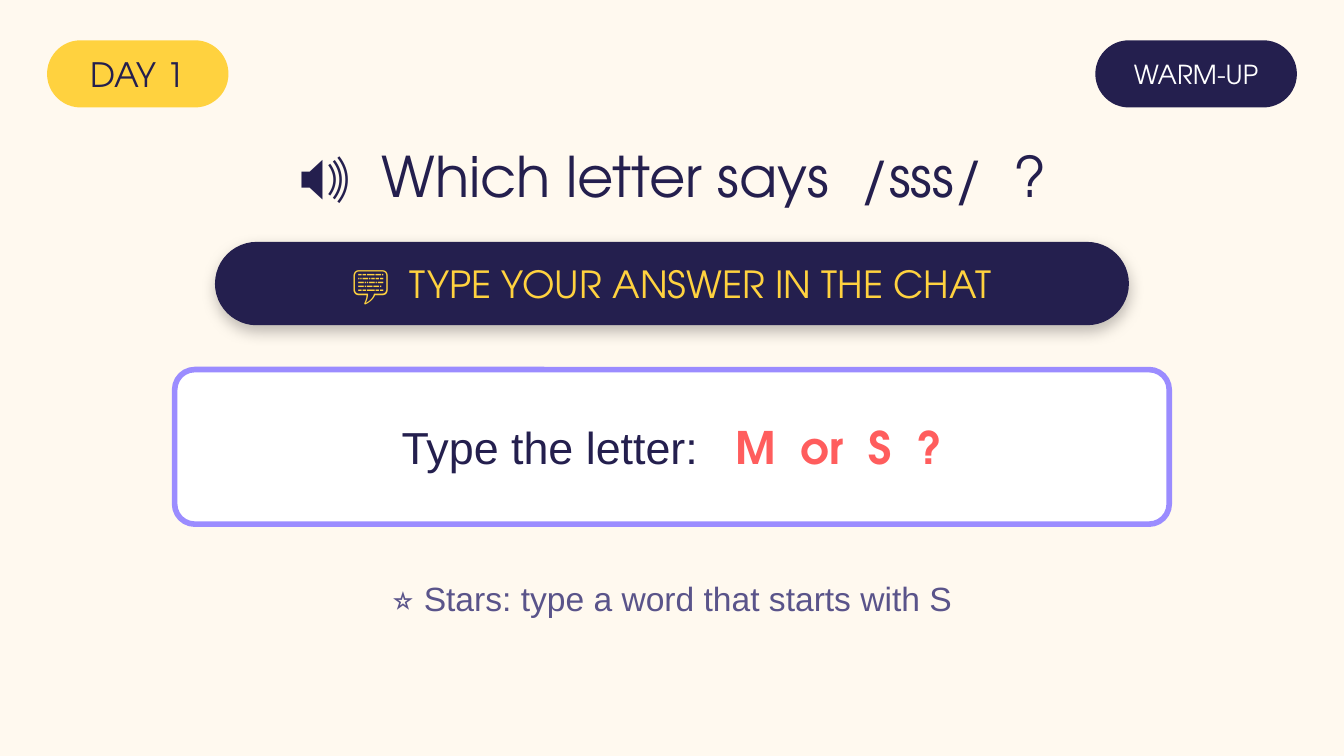
"""Build the Day 1 warm-up slide asking which letter makes a sound."""
from dataclasses import dataclass

from lxml import etree
from pptx import Presentation
from pptx import util as u
from pptx.dml.color import RGBColor
from pptx.enum import shapes, text
from pptx.oxml.ns import qn

DISPLAY, BODY = "TeX Gyre Adventor", "Arial"
NAVY, YELLOW, WHITE, CREAM = "241F4E", "FFD23F", "FFFFFF", "FFF9EF"
LILAC, CORAL, MUTED = "9B8CFF", "FF5D5D", "5A548A"
SLIDE_WIDTH = 10
SLIDE_HEIGHT = SLIDE_WIDTH * 9 / 16


@dataclass(frozen=True)
class Span:
    words: str
    size: int
    colour: str
    font: str = DISPLAY
    bold: bool = False


@dataclass(frozen=True)
class Panel:
    fill: str
    corner: float = 0.5
    border: str | None = None
    raised: bool = False


@dataclass(frozen=True)
class Label:
    left: float
    top: float
    width: float
    height: float
    spans: tuple[Span, ...]
    panel: Panel | None = None
    inset: bool = False

    def bounds(self) -> tuple[u.Length, ...]:
        return tuple(map(u.Inches, (self.left, self.top, self.width, self.height)))


LABELS = (
    Label(0.35, 0.3, 1.35, 0.5, (Span("DAY 1", 18, NAVY),), Panel(YELLOW)),
    Label(8.15, 0.3, 1.5, 0.5, (Span("WARM-UP", 14, WHITE),), Panel(NAVY)),
    Label(0, 0.95, SLIDE_WIDTH, 0.7,
          (Span("🔊  Which letter says  /sss/  ?", 30, NAVY),), inset=True),
    Label(1.6, 1.8, 6.8, 0.62, (Span("💬  TYPE YOUR ANSWER IN THE CHAT", 20, YELLOW),),
          Panel(NAVY, raised=True)),
    Label(1.3, 2.75, 7.4, 1.15,
          (Span("Type the letter:   ", 24, NAVY, BODY),
           Span("M  or  S  ?", 24, CORAL, bold=True)),
          Panel(WHITE, corner=0.13, border=LILAC), inset=True),
    Label(0, 4.2, SLIDE_WIDTH, 0.5,
          (Span("⭐ Stars: type a word that starts with S", 18, MUTED, BODY),), inset=True),
)


def paint(target, colour: str) -> None:
    target.solid()
    target.fore_color.rgb = RGBColor.from_string(colour)


def add_shadow(box) -> None:
    effects = box._element.spPr.find(qn("a:effectLst"))
    shadow = etree.SubElement(effects, qn("a:outerShdw"), blurRad=str(u.Pt(8)),
                              dist=str(u.Pt(3)), dir="5400000", rotWithShape="0")
    colour = etree.SubElement(shadow, qn("a:srgbClr"), val="000000")
    etree.SubElement(colour, qn("a:alpha"), val="25000")


def add_panel(page, panel: Panel, bounds: tuple[u.Length, ...]) -> None:
    box = page.shapes.add_shape(shapes.MSO_SHAPE.ROUNDED_RECTANGLE, *bounds)
    box.adjustments[0] = panel.corner
    box.shadow.inherit = False
    paint(box.fill, panel.fill)
    if panel.border:
        paint(box.line.fill, panel.border)
        box.line.width = u.Pt(3)
    else:
        box.line.fill.background()
    if panel.raised:
        add_shadow(box)


def add_label(page, label: Label) -> None:
    if label.panel:
        add_panel(page, label.panel, label.bounds())
    frame = page.shapes.add_textbox(*label.bounds()).text_frame
    frame.word_wrap = True
    frame.vertical_anchor = text.MSO_ANCHOR.MIDDLE
    if not label.inset:
        frame.margin_left = frame.margin_right = frame.margin_top = frame.margin_bottom = 0
    para = frame.paragraphs[0]
    para.alignment = text.PP_ALIGN.CENTER
    for span in label.spans:
        run = para.add_run()
        run.text = span.words
        run.font.name = span.font
        run.font.size = u.Pt(span.size)
        run.font.bold = span.bold
        paint(run.font.fill, span.colour)


def main() -> None:
    deck = Presentation()
    deck.slide_width, deck.slide_height = u.Inches(SLIDE_WIDTH), u.Inches(SLIDE_HEIGHT)
    page = deck.slides.add_slide(deck.slide_layouts[6])
    paint(page.background.fill, CREAM)
    for label in LABELS:
        add_label(page, label)
    deck.save("out.pptx")


if __name__ == "__main__":
    main()
